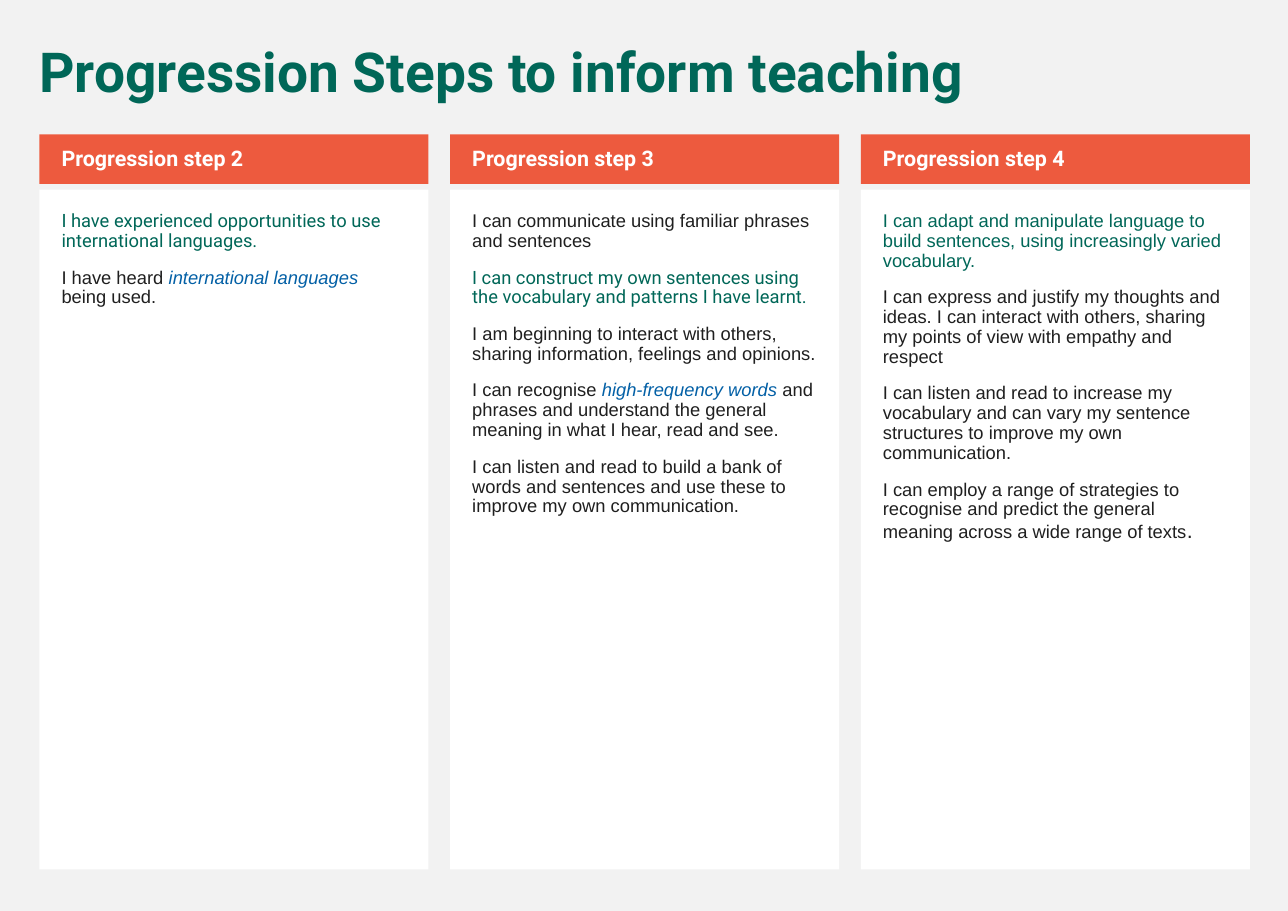
from pptx import Presentation
from pptx.dml.color import RGBColor
from pptx.enum.shapes import MSO_SHAPE
from pptx.enum.text import MSO_ANCHOR, PP_ALIGN
from pptx.util import Cm, Pt

GREY = RGBColor(0xF2, 0xF2, 0xF2)
WHITE = RGBColor(0xFF, 0xFF, 0xFF)
ORANGE = RGBColor(0xED, 0x5A, 0x3E)
GREEN = RGBColor(0x00, 0x67, 0x58)
BLACK = RGBColor(0x1F, 0x1F, 0x1F)
BLUE = RGBColor(0x03, 0x60, 0xA6)

# Styles: font, size, colour, bold, italic
TITLE = ("Roboto", 36, GREEN, True, False)
HEAD = ("Roboto", 14, WHITE, True, False)
KEY = ("Roboto", 12, GREEN, False, False)
KEY_ARIAL = ("Arial", 12, GREEN, False, False)
PLAIN = ("Arial", 12, BLACK, False, False)
TERM = ("Arial", 12, BLUE, False, True)
STOP = ("Arial", 14, BLACK, False, False)

# Content: each paragraph is a list of (text, style) runs
HEADING = "Progression Steps to inform teaching"
STEPS = [
    ("Progression step 2", [
        [("I have experienced opportunities to use international languages.", KEY)],
        [("I have heard ", PLAIN), ("international languages", TERM),
         (" being used.", PLAIN)],
    ]),
    ("Progression step 3", [
        [("I can communicate using familiar phrases and sentences", PLAIN)],
        [("I can construct my own sentences using the vocabulary and "
          "patterns I have learnt.", KEY)],
        [("I am beginning to interact with others, sharing information, "
          "feelings and opinions.", PLAIN)],
        [("I can recognise ", PLAIN), ("high-frequency words", TERM),
         (" and phrases and understand the general meaning in what I hear, "
          "read and see.", PLAIN)],
        [("I can listen and read to build a bank of words and sentences and "
          "use these to improve my own communication.", PLAIN)],
    ]),
    ("Progression step 4", [
        [("I can adapt and manipulate language to build sentences, "
          "using increasingly varied vocabulary.", KEY_ARIAL)],
        [("I can express and justify my thoughts and ideas. I can interact "
          "with others, sharing my points of view with empathy and respect", PLAIN)],
        [("I can listen and read to increase my vocabulary and can vary my "
          "sentence structures to improve my own communication.", PLAIN)],
        [("I can employ a range of strategies to recognise and predict the "
          "general meaning across a wide range of texts", PLAIN), (".", STOP)],
    ]),
]

# Layout in cm
LEFT, WIDTH, PITCH = 0.91, 8.97, 9.47
HEAD_TOP, HEAD_HIGH = 3.1, 1.14
BODY_TOP, BODY_HIGH = 4.37, 15.67
HEAD_PAD = (0.51, 0.13, 0.25, 0.13)
BODY_PAD = (0.51, 0.51, 0.51, 0.51)
TITLE_PAD = (0.25, 0.13, 0.25, 0.13)


def write(shape, paras, pad, anchor=MSO_ANCHOR.TOP):
    frame = shape.text_frame
    frame.word_wrap = True
    frame.vertical_anchor = anchor
    (frame.margin_left, frame.margin_top,
     frame.margin_right, frame.margin_bottom) = map(Cm, pad)
    for i, runs in enumerate(paras):
        para = frame.add_paragraph() if i else frame.paragraphs[0]
        para.alignment = PP_ALIGN.LEFT
        para.line_spacing = 0.9
        para.space_before = Pt(11)
        for text, (name, size, color, bold, italic) in runs:
            run = para.add_run()
            run.text = text
            font = run.font
            font.name, font.size = name, Pt(size)
            font.bold, font.italic = bold, italic
            font.color.rgb = color


def panel(slide, left, top, high, fill):
    shape = slide.shapes.add_shape(
        MSO_SHAPE.RECTANGLE, Cm(left), Cm(top), Cm(WIDTH), Cm(high))
    shape.shadow.inherit = False
    shape.fill.solid()
    shape.fill.fore_color.rgb = fill
    shape.line.fill.background()
    return shape


def main():
    deck = Presentation()
    deck.slide_width, deck.slide_height = Cm(29.7), Cm(21)
    slide = deck.slides.add_slide(deck.slide_layouts[6])
    slide.background.fill.solid()
    slide.background.fill.fore_color.rgb = GREY

    # Title
    title = slide.shapes.add_textbox(Cm(0.66), Cm(0.91), Cm(28.14), Cm(1.65))
    write(title, [[(HEADING, TITLE)]], TITLE_PAD)

    # One column per step
    for i, (label, paras) in enumerate(STEPS):
        left = LEFT + i * PITCH
        body = panel(slide, left, BODY_TOP, BODY_HIGH, WHITE)
        write(body, paras, BODY_PAD)
        head = panel(slide, left, HEAD_TOP, HEAD_HIGH, ORANGE)
        write(head, [[(label, HEAD)]], HEAD_PAD, MSO_ANCHOR.MIDDLE)

    deck.save("out.pptx")


if __name__ == "__main__":
    main()
